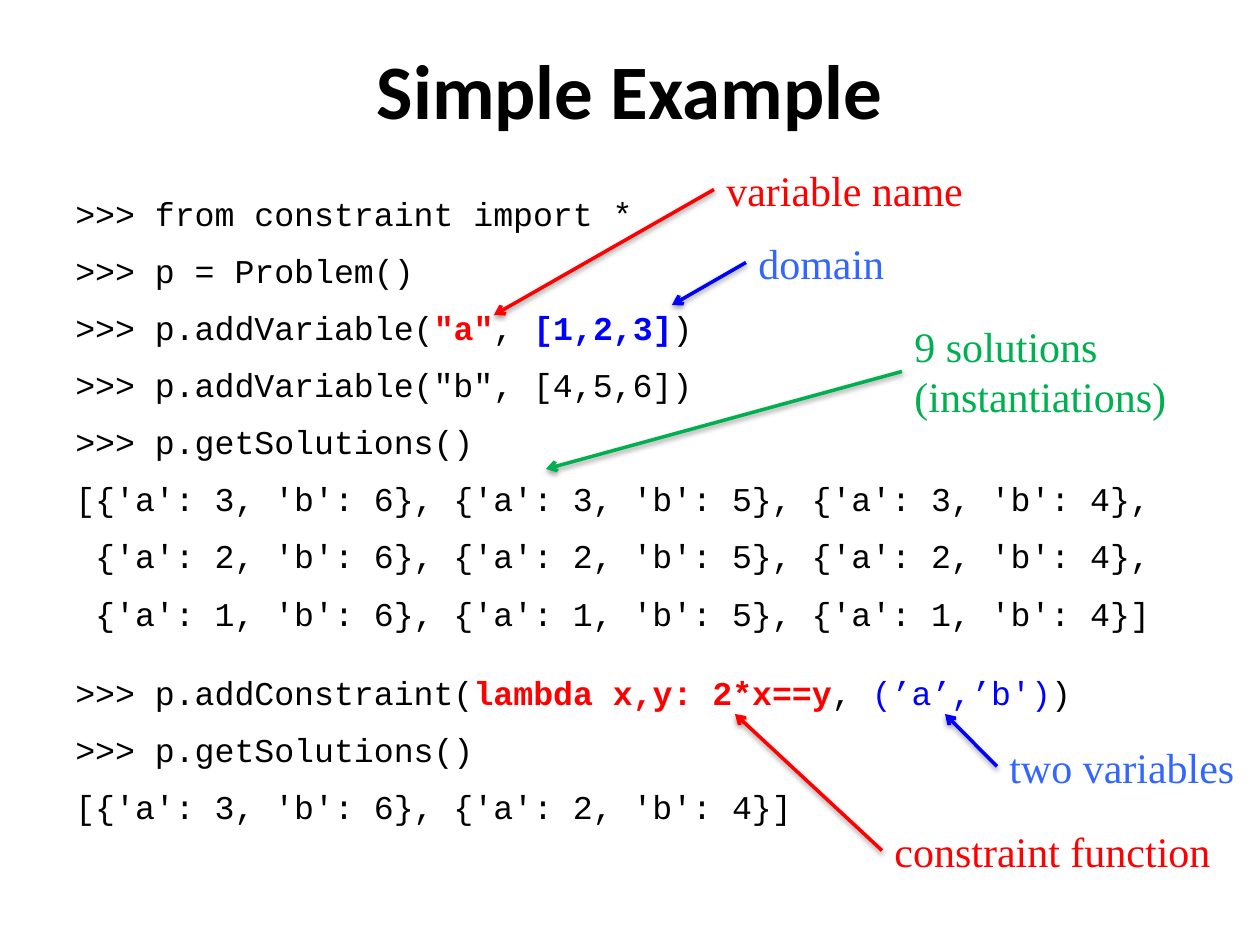
from dataclasses import dataclass

from lxml import etree
from pptx import Presentation
from pptx.dml.color import RGBColor
from pptx.enum.shapes import MSO_CONNECTOR
from pptx.enum.text import MSO_ANCHOR, MSO_AUTO_SIZE, PP_ALIGN
from pptx.oxml import parse_xml
from pptx.oxml.ns import qn
from pptx.util import Emu, Pt

STRAIGHT = MSO_CONNECTOR.STRAIGHT
MIDDLE = MSO_ANCHOR.MIDDLE
CENTER = PP_ALIGN.CENTER
FIT = MSO_AUTO_SIZE.SHAPE_TO_FIT_TEXT
LEFT_SIDE = 1

BLACK, RED, BLUE = "000000", "FF0000", "0000FF"
SKY, GREEN = "3366FF", "00B050"

LINE_GAP, BLOCK_GAP = 5.3, 18.2

SHADOW = (
    '<a:effectLst xmlns:a="http://schemas.openxmlformats.org/drawingml/2006/main">'
    '<a:outerShdw blurRad="40000" dist="20000" dir="5400000" rotWithShape="0">'
    '<a:srgbClr val="000000"><a:alpha val="38000"/></a:srgbClr>'
    "</a:outerShdw></a:effectLst>"
)


@dataclass
class Token:
    text: str
    color: str = BLACK
    bold: bool = False


@dataclass
class Line:
    tokens: list[Token]
    gap: float = LINE_GAP


@dataclass
class Note:
    """A label and the arrow from its left side to a tip in the code."""
    text: str
    box: tuple[int, int, int, int]
    tip: tuple[int, int]
    color: str
    arrow: str
    wrap: bool = False


def plain(text: str) -> Line:
    return Line([Token(text)])


CODE = [
    plain(">>> from constraint import *"),
    plain(">>> p = Problem()"),
    Line([Token(">>> p.addVariable("), Token('"a"', RED, True), Token(", "),
          Token("[1,2,3]", BLUE, True), Token(")")]),
    plain('>>> p.addVariable("b", [4,5,6])'),
    plain(">>> p.getSolutions()"),
    plain("[{'a': 3, 'b': 6}, {'a': 3, 'b': 5}, {'a': 3, 'b': 4},"),
    plain(" {'a': 2, 'b': 6}, {'a': 2, 'b': 5}, {'a': 2, 'b': 4},"),
    plain(" {'a': 1, 'b': 6}, {'a': 1, 'b': 5}, {'a': 1, 'b': 4}]"),
    Line([Token(">>> p.addConstraint("), Token("lambda x,y: 2*x==y", RED, True),
          Token(", "), Token("(’a’,’b')", BLUE), Token(")")], BLOCK_GAP),
    plain(">>> p.getSolutions()"),
    plain("[{'a': 3, 'b': 6}, {'a': 2, 'b': 4}]"),
]

NOTES = [
    Note("variable name", (714, 158, 265, 63), (494, 315), RED, RED),
    Note("domain", (746, 231, 152, 63), (672, 305), SKY, BLUE),
    Note("constraint function", (882, 819, 345, 63), (735, 714), RED, RED),
    Note("two variables", (997, 735, 253, 63), (945, 714), SKY, BLUE),
    Note("9 solutions (instantiations)", (902, 314, 284, 115), (546, 469),
         GREEN, GREEN, True),
]


def px(n: int) -> Emu:
    return Emu(round(n * 914400 / 126))


def rgb(color: str) -> RGBColor:
    return RGBColor.from_string(color)


def style(run, face: str, size: int, color: str, bold: bool = False) -> None:
    font = run.font
    font.name, font.size, font.bold = face, Pt(size), bold
    font.color.rgb = rgb(color)


def add_box(slide, box: tuple[int, int, int, int], wrap: bool = True):
    shape = slide.shapes.add_textbox(*map(px, box))
    shape.text_frame.word_wrap = wrap
    return shape


def add_title(slide, text: str) -> None:
    frame = add_box(slide, (63, 21, 1134, 136)).text_frame
    frame.vertical_anchor = MIDDLE
    frame.text = text
    para = frame.paragraphs[0]
    para.alignment = CENTER
    style(para.runs[0], "Calibri", 44, BLACK, True)


def add_code(slide, lines: list[Line]) -> None:
    frame = add_box(slide, (63, 179, 1134, 725)).text_frame
    for i, line in enumerate(lines):
        para = frame.add_paragraph() if i else frame.paragraphs[0]
        para.line_spacing = 1.2
        para.space_before = Pt(line.gap)
        for token in line.tokens:
            run = para.add_run()
            run.text = token.text
            style(run, "Courier New", 19, token.color, token.bold)


def add_note(slide, note: Note) -> None:
    label = add_box(slide, note.box, note.wrap)
    frame = label.text_frame
    frame.auto_size = FIT
    frame.text = note.text
    style(frame.paragraphs[0].runs[0], "Times New Roman", 24, note.color)

    x, y = map(px, note.tip)
    arrow = slide.shapes.add_connector(STRAIGHT, label.left, label.top, x, y)
    arrow.begin_connect(label, LEFT_SIDE)
    arrow.line.color.rgb = rgb(note.arrow)
    arrow.line.width = Pt(2)
    props = arrow._element.spPr
    etree.SubElement(props.find(qn("a:ln")), qn("a:tailEnd"), type="arrow")
    props.append(parse_xml(SHADOW))


def main() -> None:
    deck = Presentation()
    deck.slide_width, deck.slide_height = px(1260), px(945)
    slide = deck.slides.add_slide(deck.slide_layouts[6])
    add_title(slide, "Simple Example")
    add_code(slide, CODE)
    for note in NOTES:
        add_note(slide, note)
    deck.save("out.pptx")


if __name__ == "__main__":
    main()
